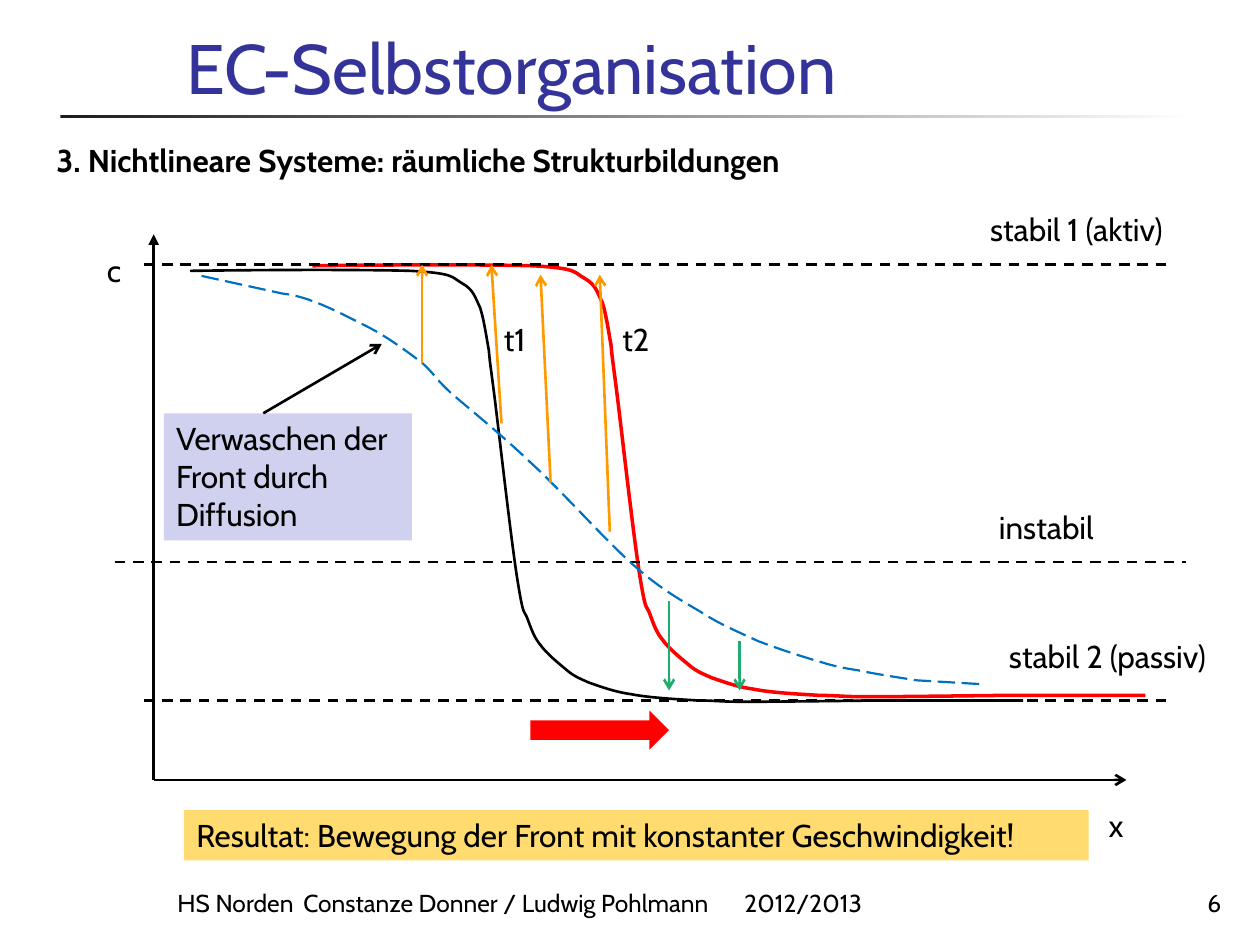
import lxml.etree
import pptx
import pptx.dml.color
import pptx.enum.dml
import pptx.enum.shapes
import pptx.enum.text
import pptx.oxml.ns
import pptx.util

Inches = pptx.util.Inches
qn = pptx.oxml.ns.qn
ALIGN = pptx.enum.text.PP_ALIGN
ANCHOR = pptx.enum.text.MSO_ANCHOR
DASH = pptx.enum.dml.MSO_LINE
SHAPE = pptx.enum.shapes.MSO_SHAPE

FONT = "Cabin"
COLORS = {
    "title": "333399",
    "black": "000000",
    "rule_start": "1C1C1C",
    "white": "FFFFFF",
    "front": "FF0000",
    "diffusion": "0070C0",
    "activation": "FF9900",
    "passivation": "20AC6F",
    "callout": "A3A3E0",
    "result": "FFC000",
}

# Start point, then three points for each Bézier segment
FRONT = [
    (1.51, 2.15),
    (2.21, 2.14), (2.91, 2.14), (3.26, 2.15),
    (3.62, 2.17), (3.58, 2.2), (3.67, 2.25),
    (3.76, 2.3), (3.77, 2.36), (3.81, 2.44),
    (3.84, 2.53), (3.86, 2.67), (3.88, 2.78),
    (3.89, 2.89), (3.88, 2.8), (3.92, 3.11),
    (3.96, 3.42), (4.06, 4.32), (4.11, 4.62),
    (4.16, 4.93), (4.16, 4.83), (4.19, 4.92),
    (4.22, 5), (4.24, 5.06), (4.29, 5.12),
    (4.34, 5.19), (4.44, 5.27), (4.5, 5.32),
    (4.56, 5.37), (4.59, 5.38), (4.68, 5.42),
    (4.77, 5.45), (4.87, 5.49), (5.01, 5.51),
    (5.16, 5.54), (5.39, 5.55), (5.54, 5.56),
    (5.69, 5.56), (5.69, 5.57), (5.93, 5.57),
    (6.17, 5.57), (6.96, 5.56), (6.96, 5.56),
]
FRONT_END = (8.12, 5.56)
FRONT_SHIFT = (0.97, -0.04)

DIFFUSION_START = (1.6, 2.19)
DIFFUSION = [
    (2.24, 2.33),
    (2.45, 2.35), (2.69, 2.48), (2.87, 2.57),
    (3.06, 2.66), (3.23, 2.79), (3.35, 2.88),
    (3.46, 2.98), (3.44, 2.99), (3.58, 3.12),
    (3.73, 3.25), (3.98, 3.45), (4.21, 3.67),
    (4.45, 3.89), (4.78, 4.26), (5, 4.46),
    (5.22, 4.66), (5.38, 4.75), (5.55, 4.85),
    (5.72, 4.96), (5.87, 5.02), (6.02, 5.09),
    (6.18, 5.15), (6.36, 5.21), (6.5, 5.25),
    (6.63, 5.29), (6.68, 5.3), (6.81, 5.32),
    (6.94, 5.35), (7.28, 5.4), (7.28, 5.4),
]
DIFFUSION_END = (7.79, 5.43)


def rgb(color):
    return pptx.dml.color.RGBColor.from_string(COLORS[color])


def set_line(line, color, width, dash=None):
    line.color.rgb = rgb(color)
    line.width = pptx.util.Pt(width)
    if dash:
        line.dash_style = dash


def write(shape, text, size=18, color="black", bold=False, align=ALIGN.LEFT,
          anchor=ANCHOR.TOP, wrap=True):
    frame = shape.text_frame
    frame.word_wrap = wrap
    frame.vertical_anchor = anchor
    paragraph = frame.paragraphs[0]
    paragraph.text = text
    paragraph.alignment = align
    font = paragraph.font
    font.name, font.size, font.bold = FONT, pptx.util.Pt(size), bold
    font.color.rgb = rgb(color)
    return paragraph


def add_text(slide, box, text, **style):
    return write(slide.shapes.add_textbox(*map(Inches, box)), text, **style)


def add_filled(slide, preset, box, color=None, opacity=None):
    shape = slide.shapes.add_shape(preset, *map(Inches, box))
    shape.shadow.inherit = False
    shape.line.fill.background()
    if color:
        shape.fill.solid()
        shape.fill.fore_color.rgb = rgb(color)
    if opacity:
        srgb = shape.element.spPr.find(".//" + qn("a:srgbClr"))
        lxml.etree.SubElement(srgb, qn("a:alpha"), val=str(opacity * 1000))
    return shape


def add_line(slide, start, end, color="black", dash=None, arrowhead=None):
    points = map(Inches, (*start, *end))
    connector = slide.shapes.add_connector(
        pptx.enum.shapes.MSO_CONNECTOR.STRAIGHT, *points)
    set_line(connector.line, color, 1.5, dash)
    if arrowhead:
        lxml.etree.SubElement(connector.line._get_or_add_ln(),
                              qn("a:tailEnd"), type=arrowhead)
    lxml.etree.SubElement(connector.element.spPr, qn("a:effectLst"))


def add_curve(slide, points, color, width, dash=None, straight_start=0):
    """Draw Bézier triples between optional straight start and end pieces."""
    emu = [(Inches(x), Inches(y)) for x, y in points]
    builder = slide.shapes.build_freeform(*emu[0])
    builder.add_line_segments(emu[1:], close=False)
    curve = builder.convert_to_shape()
    outline = curve.element.spPr.find(".//" + qn("a:path"))
    segments = outline.findall(qn("a:lnTo"))[straight_start:-1]
    for first, second, third in zip(*[iter(segments)] * 3):
        bezier = lxml.etree.Element(qn("a:cubicBezTo"))
        first.addprevious(bezier)
        for segment in (first, second, third):
            bezier.append(segment[0])
            outline.remove(segment)
    curve.shadow.inherit = False
    curve.fill.background()
    set_line(curve.line, color, width, dash)


def add_header(slide):
    rule = add_filled(slide, SHAPE.RECTANGLE, (0.48, 0.91, 9, 0.03))
    rule.fill.gradient()
    rule.fill.gradient_angle = 0
    for stop, color in zip(rule.fill.gradient_stops, ("rule_start", "white")):
        stop.color.rgb = rgb(color)
    add_text(slide, (1.38, 0.23, 8.4, 0.68), "EC-Selbstorganisation",
             size=40, color="title", anchor=ANCHOR.BOTTOM)
    add_text(slide, (0.35, 1.07, 7.04, 0.4),
             "3. Nichtlineare Systeme: räumliche Strukturbildungen",
             bold=True, wrap=False)


def add_footer(slide):
    credits = add_text(slide, (0.35, 6.83, 7.95, 0.5),
                       "HS Norden\tConstanze Donner / Ludwig Pohlmann\t2012/2013",
                       size=14, anchor=ANCHOR.BOTTOM)
    properties = credits._p.get_or_add_pPr()
    properties.set("marL", str(Inches(0.96)))
    properties.set("indent", "0")
    tabs = lxml.etree.Element(qn("a:tabLst"))
    for position in (2.25, 5.86):
        lxml.etree.SubElement(tabs, qn("a:tab"), pos=str(Inches(position)), algn="l")
    properties.find(qn("a:defRPr")).addprevious(tabs)
    add_text(slide, (8.47, 6.83, 1.32, 0.5), "6", size=14,
             align=ALIGN.RIGHT, anchor=ANCHOR.BOTTOM)


def add_diagram(slide):
    origin = (1.22, 6.19)
    add_line(slide, origin, (1.22, 1.86), arrowhead="triangle")
    add_line(slide, origin, (8.94, 6.19), arrowhead="arrow")

    front = FRONT + [FRONT_END]
    dx, dy = FRONT_SHIFT
    add_curve(slide, front, "black", 1.5)
    add_curve(slide, [(x + dx, y + dy) for x, y in front], "front", 2)
    for left, right, level in ((0.91, 9.41, 4.46), (1.14, 9.25, 2.1), (1.14, 9.25, 5.56)):
        add_line(slide, (left, level), (right, level), dash=DASH.DASH)
    add_curve(slide, [DIFFUSION_START, *DIFFUSION, DIFFUSION_END], "diffusion",
              1.25, DASH.LONG_DASH, straight_start=1)

    for label, left, top, width in (
            ("c", 0.75, 1.94, 0.32), ("x", 8.7, 6.35, 0.33),
            ("stabil 1 (aktiv)", 7.76, 1.62, 1.8),
            ("stabil 2 (passiv)", 7.91, 5.01, 1.96),
            ("instabil", 7.83, 3.98, 0.99),
            ("t1", 3.9, 2.49, 0.42), ("t2", 4.84, 2.49, 0.42)):
        add_text(slide, (left, top, width, 0.4), label, wrap=False)

    callout = add_filled(slide, SHAPE.RECTANGLE, (1.3, 3.28, 1.97, 1.01), "callout", 51)
    write(callout, "Verwaschen der Front durch Diffusion")
    add_line(slide, (2.09, 3.28), (3.03, 2.73), arrowhead="arrow")

    for color, start, end in (
            ("activation", (3.35, 2.88), (3.35, 2.1)),
            ("activation", (4.37, 3.83), (4.29, 2.18)),
            ("activation", (3.98, 3.36), (3.9, 2.1)),
            ("activation", (4.84, 4.22), (4.76, 2.18)),
            ("passivation", (5.31, 4.77), (5.31, 5.48)),
            ("passivation", (5.87, 5.09), (5.87, 5.48))):
        add_line(slide, start, end, color, arrowhead="arrow")

    add_filled(slide, SHAPE.RIGHT_ARROW, (4.21, 5.64, 1.1, 0.31), "front")
    result = add_filled(slide, SHAPE.RECTANGLE, (1.46, 6.43, 7.18, 0.4), "result", 56)
    write(result, "Resultat: Bewegung der Front mit konstanter Geschwindigkeit!")


def main():
    presentation = pptx.Presentation()
    presentation.slide_width, presentation.slide_height = Inches(10), Inches(7.5)
    slide = presentation.slides.add_slide(presentation.slide_layouts[6])
    add_header(slide)
    add_footer(slide)
    add_diagram(slide)
    presentation.save("out.pptx")


if __name__ == "__main__":
    main()
